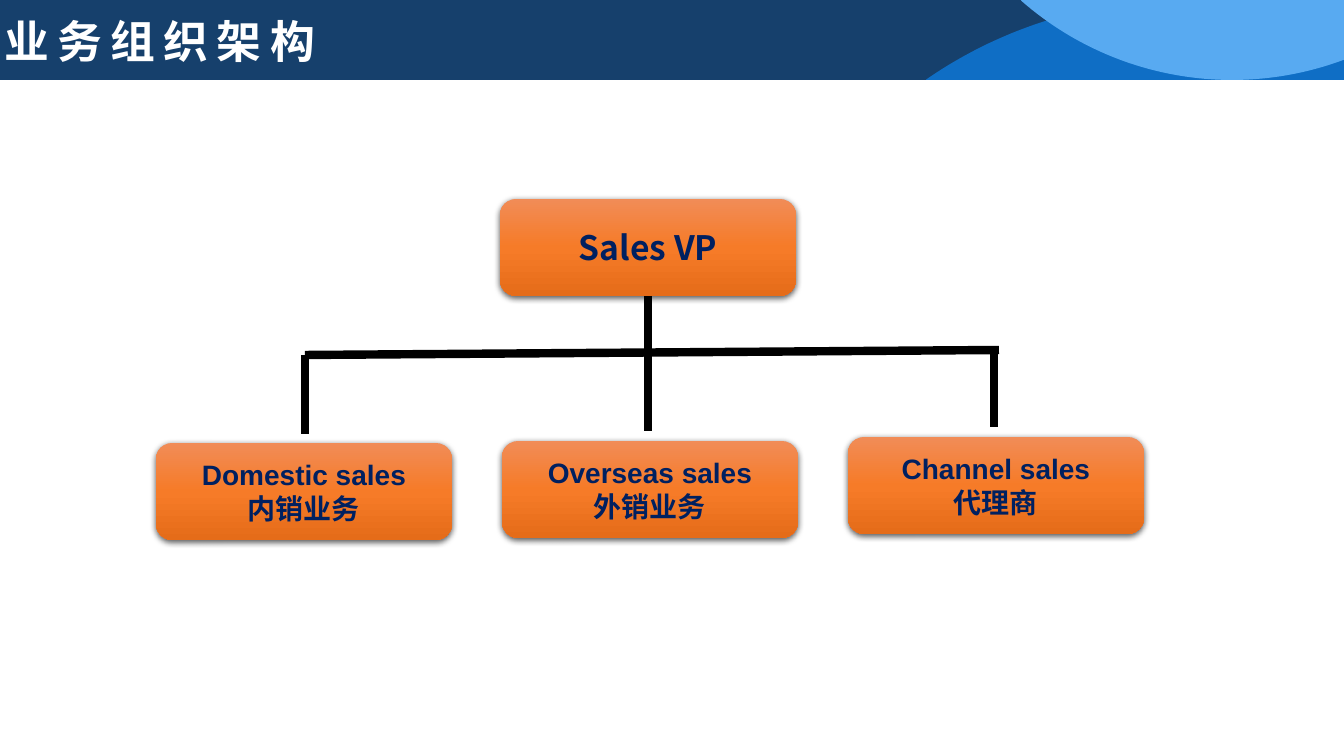
import math
from dataclasses import dataclass
from lxml import etree
from pptx import Presentation, util as u
from pptx.dml.color import RGBColor
from pptx.enum import shapes, text
from pptx.oxml import parse_xml
from pptx.oxml.ns import nsdecls, qn

PX = 914400 / 100.8  # EMU in one px


@dataclass(frozen=True)
class Theme:
    navy: str = "16406C"
    blue: str = "0F6EC5"
    sky: str = "58AAF1"
    white: str = "FFFFFF"
    ink: str = "002060"
    black: str = "000000"
    glow: tuple = ((0, "F18C57"), (50, "F67B28"), (100, "E56C19"))
    latin: str = "Arial"
    cjk: str = "Noto Sans CJK SC"
    head: int = 32
    boss: int = 24
    team: int = 20
    rule: int = 6


T = Theme()


def px(n):
    return u.Emu(round(n * PX))


def rgb(code):
    return RGBColor.from_string(code)


def style(par, size, color, face):
    for run in par.runs:
        font = run.font
        font.size, font.bold, font.name = u.Pt(size), True, face
        font.color.rgb = rgb(color)
        east = etree.SubElement(run._r.get_or_add_rPr(), qn("a:ea"))
        east.set("typeface", T.cjk)


def outline(slide, points, color):
    spots = [(px(x), px(y)) for x, y in points]
    pen = slide.shapes.build_freeform(*spots[0], scale=1.0)
    pen.add_line_segments(spots[1:], close=True)
    form = pen.convert_to_shape()
    form.shadow.inherit = False
    form.fill.solid()
    form.fill.fore_color.rgb = rgb(color)
    form.line.fill.background()


def arc(mid, radius, left, right, count=60):
    """Points of a circle's cap: x, and depth below its apex."""
    for i in range(count + 1):
        x = left + (right - left) * i / count
        yield x, radius - math.sqrt(radius ** 2 - (x - mid) ** 2)


def banner(slide, x, y, w, h, title):
    right, base = x + w, y + h
    # Band and its two round waves
    outline(slide, [(x, y), (right, y), (right, base), (x, base)], T.navy)
    hill = [(a, y + d) for a, d in arc(right - 163, 448, right - 418, right)]
    outline(slide, [(right, base), (right - 418, base)] + hill, T.blue)
    bowl = [(a, base - d) for a, d in arc(right - 112, 320, right - 323, right)]
    outline(slide, bowl + [(right, y), (right - 323, y)], T.sky)

    # Title
    box = slide.shapes.add_textbox(px(x + 3), px(y + 14), px(355), px(54))
    frame = box.text_frame
    frame.word_wrap = True
    frame.vertical_anchor = text.MSO_ANCHOR.MIDDLE
    frame.margin_left = px(1)
    frame.margin_top = frame.margin_right = frame.margin_bottom = 0
    frame.text = title
    par = frame.paragraphs[0]
    style(par, T.head, T.white, T.latin)
    par.runs[0]._r.get_or_add_rPr().set("spc", "600")


def card(slide, x, y, w, h, lines, size, face):
    box = slide.shapes.add_shape(
        shapes.MSO_SHAPE.ROUNDED_RECTANGLE, px(x), px(y), px(w), px(h))
    box.line.fill.background()
    # Three-step gradient from top to bottom
    box.fill.gradient()
    box.fill.gradient_angle = 270
    stops = box._element.spPr.find(".//" + qn("a:gsLst"))
    for old in list(stops):
        stops.remove(old)
    for pos, color in T.glow:
        stop = etree.SubElement(stops, qn("a:gs"), pos=str(pos * 1000))
        etree.SubElement(stop, qn("a:srgbClr"), val=color)
    # Soft shadow below
    box.shadow.inherit = False
    box._element.spPr.find(qn("a:effectLst")).append(parse_xml(
        f'<a:outerShdw {nsdecls("a")} blurRad="57150" dist="19050" '
        f'dir="5400000" algn="ctr" rotWithShape="0"><a:srgbClr val="{T.black}">'
        '<a:alpha val="63000"/></a:srgbClr></a:outerShdw>'))
    # Label
    frame = box.text_frame
    frame.word_wrap = True
    frame.vertical_anchor = text.MSO_ANCHOR.MIDDLE
    frame.text = "\n".join(lines)
    for par in frame.paragraphs:
        par.alignment = text.PP_ALIGN.CENTER
        style(par, size, T.ink, face)
    return box


def link(slide, x1, y1, x2, y2):
    line = slide.shapes.add_connector(
        shapes.MSO_CONNECTOR.STRAIGHT, px(x1), px(y1), px(x2), px(y2))
    line.line.color.rgb = rgb(T.black)
    line.line.width = u.Pt(T.rule)
    etree.SubElement(line._element.spPr, qn("a:effectLst"))
    return line


def chart(slide, x, y, w, h, boss, teams):
    wide, tall = 296, 97
    top = card(slide, x + 344, y, wide, tall, [boss], T.boss, T.cjk)

    # Crossbar, then one leg for each team
    link(slide, x + 149, y + 156, x + 843, y + 151)
    link(slide, x + 149, y + 156, x + 149, y + 235)
    stem = link(slide, x + 492, y + tall, x + 492, y + 232)
    stem.begin_connect(top, 2)
    link(slide, x + 838, y + 149, x + 838, y + 228)

    # Teams share the width; each has its own lift from the base
    step = (w - wide) / (len(teams) - 1)
    for i, (lift, *lines) in enumerate(teams):
        card(slide, x + i * step, y + h - tall - lift, wide, tall,
             lines, T.team, T.latin)


def main():
    deck = Presentation()
    deck.slide_width, deck.slide_height = px(1344), px(756)
    slide = deck.slides.add_slide(deck.slide_layouts[6])
    banner(slide, 0, 0, 1344, 80, "业务组织架构")
    chart(slide, 156, 199, 988, 341, "Sales VP", [
        (0, "Domestic sales", "内销业务"),
        (2, "Overseas sales", "外销业务"),
        (6, "Channel sales", "代理商"),
    ])
    deck.save("out.pptx")


if __name__ == "__main__":
    main()
